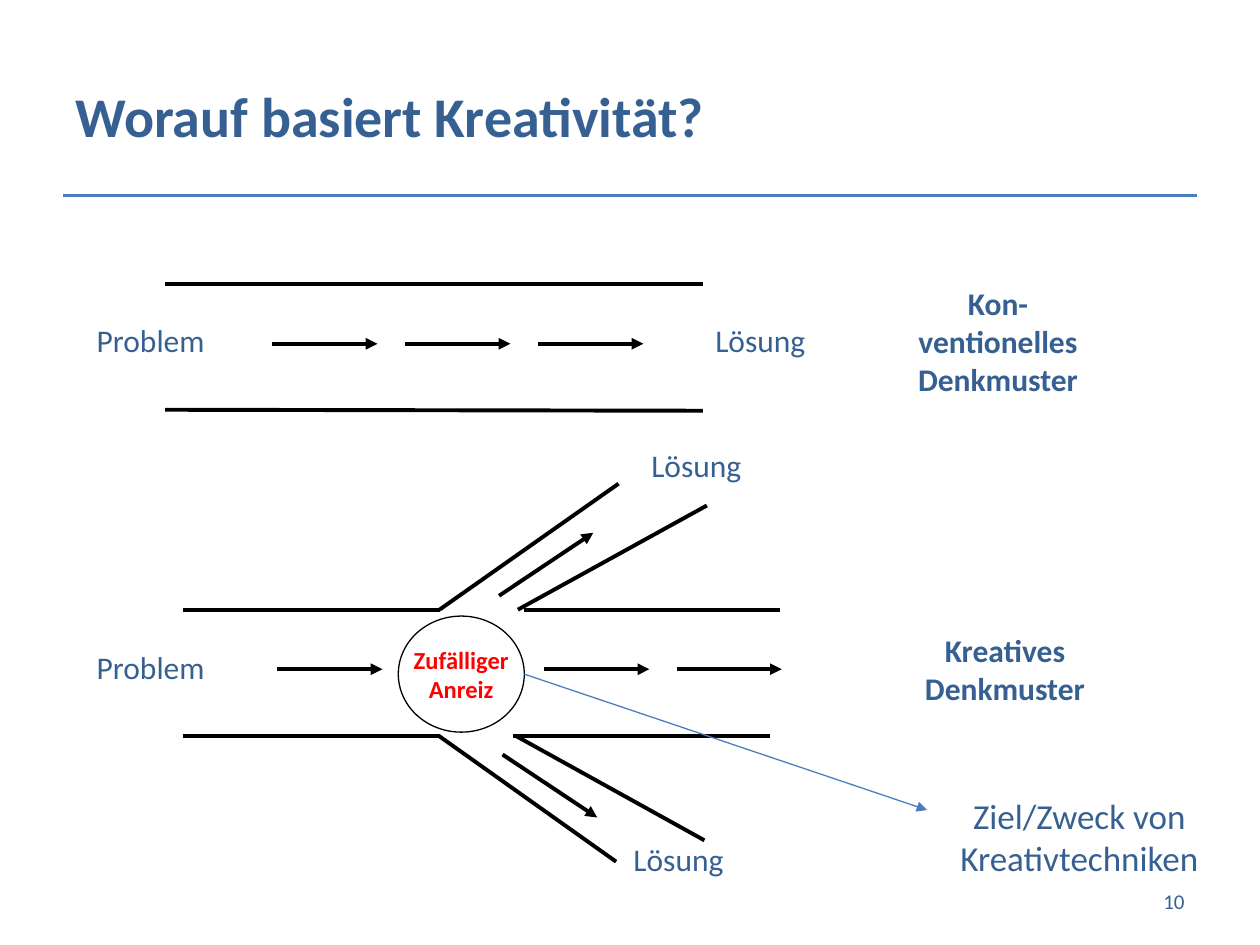
from lxml.etree import SubElement
from pptx import Presentation
from pptx.dml.color import RGBColor
from pptx.enum.shapes import MSO_CONNECTOR as Connector, MSO_SHAPE as Shape
from pptx.enum.text import MSO_ANCHOR as Anchor, PP_ALIGN as Align
from pptx.oxml.ns import qn
from pptx.util import Cm, Pt

BLUE = RGBColor(0x37, 0x60, 0x92)
ACCENT = RGBColor(0x4B, 0x7E, 0xBC)
BLACK = RGBColor(0, 0, 0)
RED = RGBColor(0xFF, 0, 0)
FONT = "Calibri"

# All lengths in centimetres; lines are (x1, y1, x2, y2).
TITLE = "Worauf basiert Kreativität?"
TITLE_RULE = (1.27, 3.94, 24.13, 3.94)
TOP, BOTTOM = 12.29, 14.83  # walls of the creative channel
WALLS = [
    (3.33, 5.72, 14.17, 5.72),
    (3.33, 8.26, 14.17, 8.28),
    (3.68, TOP, 8.86, TOP),
    (3.68, BOTTOM, 8.86, BOTTOM),
    (10.57, TOP, 15.72, TOP),
    (10.34, BOTTOM, 15.52, BOTTOM),
    (8.86, TOP, 12.47, 9.75),
    (10.44, TOP, 14.25, 10.19),
    (8.84, BOTTOM, 12.42, 17.37),
    (10.39, BOTTOM, 14.2, 16.94),
]
ARROW_LENGTH = 2.12
ARROW_ROWS = [(6.93, (5.49, 8.17, 10.85)), (13.49, (5.59, 10.97, 13.64))]
BRANCH_ARROWS = [(10.06, 12.01, 11.96, 10.74), (10.13, 15.21, 12.04, 16.48)]
PURPOSE_ARROW = (10.57, 13.59, 18.69, 16.33)
STIMULUS = (8.03, 12.42, 2.54, 2.34)
STIMULUS_TEXT = ["Zufälliger", "Anreiz"]

# Paragraphs, box (left, top, width, height), size, bold, alignment, wrap
LABELS = [
    (["Problem"], (1.7, 6.35, 3.35, 1.02), 18, False, Align.LEFT, True),
    (["Lösung"], (14.17, 6.35, 3.1, 1.02), 18, False, Align.LEFT, True),
    (["Kon-\nventionelles", "Denkmuster"], (18.24, 5.61, 3.76, 2.57), 18, True, Align.CENTER, False),
    (["Problem"], (1.7, 12.93, 3.48, 1.02), 18, False, Align.LEFT, True),
    (["Lösung"], (12.88, 8.86, 3.07, 1.02), 18, False, Align.LEFT, True),
    (["Lösung"], (12.52, 16.81, 3.1, 1.02), 18, False, Align.LEFT, True),
    (["Kreatives Denkmuster"], (17.3, 12.6, 5.92, 1.8), 18, True, Align.CENTER, True),
    (["Ziel/Zweck von Kreativtechniken"], (18.8, 15.9, 5.92, 1.96), 20, False, Align.CENTER, True),
]
PAGE_NUMBER = (["10"], (18.21, 17.65, 5.92, 1.02), 12, False, Align.RIGHT, True)


def cm(lengths):
    return [Cm(length) for length in lengths]


def write(frame, paragraphs, size, bold, align, color=BLUE):
    """Fill a text frame; a newline inside a paragraph becomes a line break."""
    for index, text in enumerate(paragraphs):
        paragraph = frame.paragraphs[0] if index == 0 else frame.add_paragraph()
        paragraph.alignment = align
        for number, part in enumerate(text.split("\n")):
            if number:
                paragraph.add_line_break()
            run = paragraph.add_run()
            run.text = part
            font = run.font
            font.name, font.size, font.bold = FONT, Pt(size), bold
            font.color.rgb = color


def add_line(slide, points, color=BLACK, width=2.25, arrow=False):
    line = slide.shapes.add_connector(Connector.STRAIGHT, *cm(points))
    line.line.color.rgb = color
    line.line.width = Pt(width)
    properties = line.element.spPr
    if arrow:
        SubElement(properties.find(qn("a:ln")), qn("a:tailEnd"), type="triangle")
    SubElement(properties, qn("a:effectLst"))


def add_label(slide, paragraphs, box, size, bold, align, wrap, anchor=Anchor.TOP):
    frame = slide.shapes.add_textbox(*cm(box)).text_frame
    frame.word_wrap = wrap
    frame.vertical_anchor = anchor
    write(frame, paragraphs, size, bold, align)


def add_title(slide):
    title = slide.shapes.title
    title.left, title.top, title.width, title.height = cm((1.27, 0.74, 22.86, 3.18))
    title.text_frame.vertical_anchor = Anchor.MIDDLE
    write(title.text_frame, [TITLE], 32, True, Align.LEFT)
    add_line(slide, TITLE_RULE, ACCENT, 1.5)


def add_stimulus(slide):
    ellipse = slide.shapes.add_shape(Shape.OVAL, *cm(STIMULUS))
    ellipse.shadow.inherit = False
    ellipse.fill.background()
    ellipse.line.color.rgb = BLACK
    ellipse.line.width = Pt(0.75)
    ellipse.text_frame.word_wrap = False
    ellipse.text_frame.vertical_anchor = Anchor.MIDDLE
    write(ellipse.text_frame, STIMULUS_TEXT, 14, True, Align.CENTER, RED)


def main():
    presentation = Presentation()
    presentation.slide_width, presentation.slide_height = Cm(25.4), Cm(19.05)
    slide = presentation.slides.add_slide(presentation.slide_layouts[5])

    add_title(slide)
    for wall in WALLS:
        add_line(slide, wall)
    for y, starts in ARROW_ROWS:
        for x in starts:
            add_line(slide, (x, y, x + ARROW_LENGTH, y), arrow=True)
    for points in BRANCH_ARROWS:
        add_line(slide, points, arrow=True)
    add_stimulus(slide)
    add_line(slide, PURPOSE_ARROW, ACCENT, 0.75, arrow=True)
    for label in LABELS:
        add_label(slide, *label)
    add_label(slide, *PAGE_NUMBER, anchor=Anchor.MIDDLE)

    presentation.save("out.pptx")


if __name__ == "__main__":
    main()
